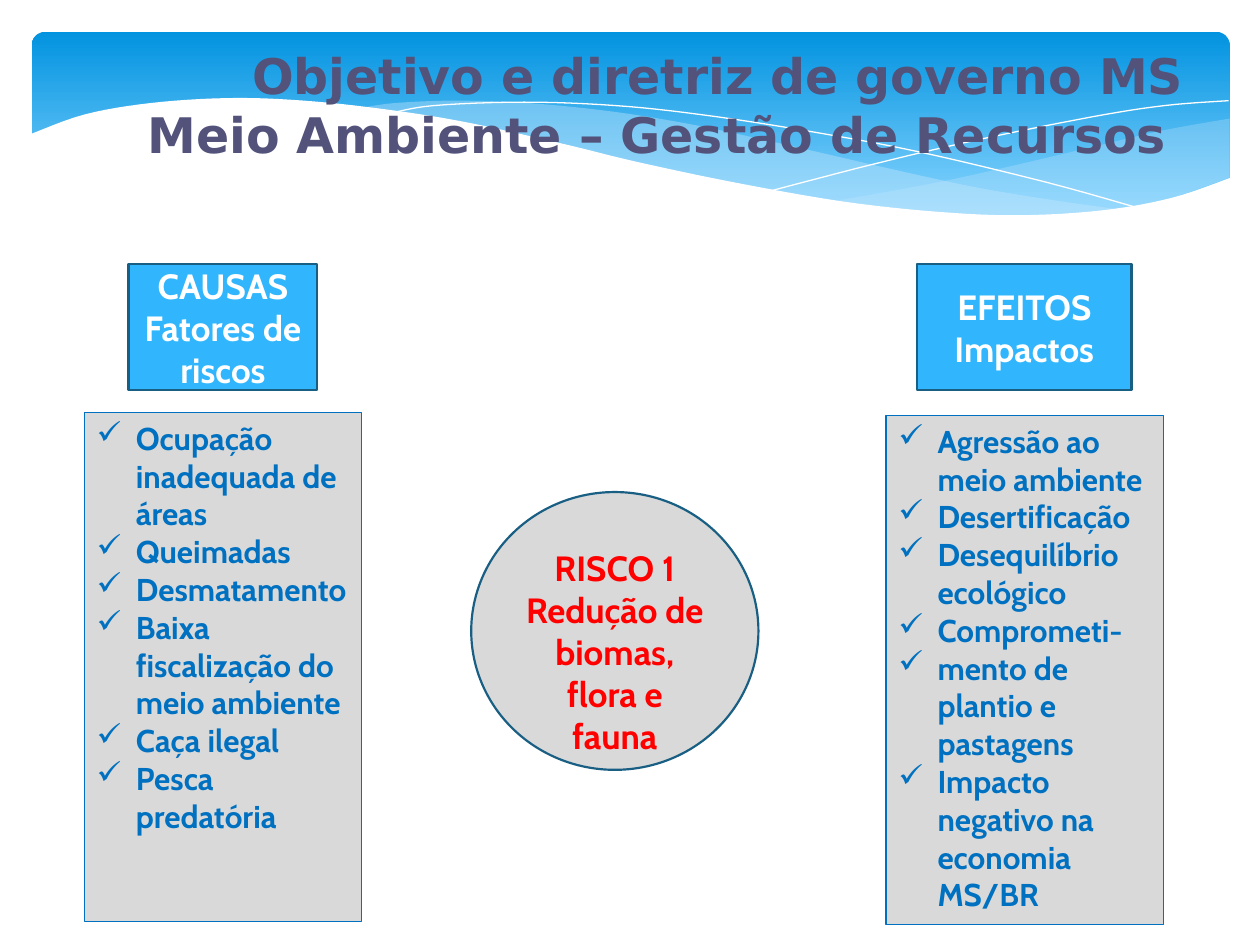
"""Build the slide on causes and effects of the biome-loss risk in MS."""
from lxml.etree import SubElement
from pptx import Presentation
from pptx.dml.color import RGBColor
from pptx.enum.shapes import MSO_SHAPE as Shape
from pptx.enum.text import MSO_ANCHOR as Anchor, PP_ALIGN as Align
from pptx.oxml.ns import qn
from pptx.util import Cm, Pt

COLORS = {
    "sky_top": "0293E0", "sky_bottom": "83D3FE", "mist": "C6E7FC",
    "white": "FFFFFF", "title": "52527A", "header": "31B6FD",
    "outline": "195F84", "panel": "D9D9D9", "blue": "0070C0", "red": "FF0000",
}

CREST_TOP = [(24.79, 2.39), (23.39, 2.64), (21.87, 3), (19.13, 3.63), (16.79, 4.06)]
CREST_BOTTOM = [(16.79, 4.06), (18.26, 4.24), (19.84, 4.36), (20.93, 4.37),
                (22.15, 4.29), (23.39, 4.06), (24.79, 3.58)]
SWELL_TOP = [(22.68, 4.24), (21.26, 4.04), (19.69, 3.78), (17.93, 3.4), (15.98, 2.95),
             (14.1, 2.54), (12.42, 2.26), (10.67, 2.08), (9.17, 2.03), (7.95, 2.08),
             (7.26, 2.18)]
SWELL_BOTTOM = [(7.26, 2.18), (8.69, 2.39), (10.26, 2.69), (12.47, 3.2), (14.83, 3.71),
                (16.89, 4.09), (18.69, 4.29), (20.22, 4.39), (21.54, 4.37), (22.68, 4.24)]
FALLING_LINE = [(7.85, 2.29), (8.74, 2.13), (10.57, 2.06), (12.42, 2.13), (14.12, 2.31),
                (16.15, 2.62), (18.47, 3.05), (21.11, 3.68), (23.04, 4.22)]
RISING_LINE = [(15.57, 3.84), (17.65, 3.3), (19.71, 2.82), (22, 2.36), (23.47, 2.13),
               (24.77, 2.03)]
SHORE = [(24.82, 3.58), (23.62, 3.99), (22.23, 4.24), (20.55, 4.34), (18.9, 4.27),
         (16.97, 4.06), (14.71, 3.66), (12.78, 3.25), (11.35, 2.9), (9.27, 2.44),
         (7.42, 2.16), (5.84, 2.01), (4.5, 1.98), (3.02, 2.08), (1.7, 2.31), (0.58, 2.72)]
SHORE_BASE = [(0.58, 5.69), (24.82, 5.69)]

CAUSES = ["Ocupação inadequada de áreas", "Queimadas", "Desmatamento",
          "Baixa fiscalização do meio ambiente", "Caça ilegal", "Pesca predatória"]
EFFECTS = ["Agressão ao meio ambiente", "Desertificação", "Desequilíbrio ecológico",
           "Comprometi-", "mento de plantio e pastagens",
           "Impacto negativo na economia MS/BR"]


def rgb(name):
    """Return the named colour."""
    return RGBColor.from_string(COLORS[name])


def smooth(knots, steps=6):
    """Return points of a Catmull-Rom curve through the knots."""
    padded = [knots[0], *knots, knots[-1]]
    curve = [knots[0]]
    for a, b, c, d in zip(padded, padded[1:], padded[2:], padded[3:]):
        for step in range(1, steps + 1):
            t = step / steps
            curve.append(tuple(
                (2 * q + (r - p) * t + (2 * p - 5 * q + 4 * r - s) * t ** 2
                 + (3 * q - p - 3 * r + s) * t ** 3) / 2
                for p, q, r, s in zip(a, b, c, d)))
    return curve


def add_wave(slide, outline, fill=None, opacity=100, close=True):
    """Draw a filled wave, or a white hairline when no fill is given."""
    points = [(Cm(x), Cm(y)) for x, y in outline]
    builder = slide.shapes.build_freeform(*points[0])
    builder.add_line_segments(points[1:], close=close)
    wave = builder.convert_to_shape()
    wave.shadow.inherit = False
    if fill is None:
        wave.fill.background()
        wave.line.color.rgb = rgb("white")
        wave.line.width = Pt(0)
        return
    wave.fill.solid()
    wave.fill.fore_color.rgb = rgb(fill)
    wave.line.fill.background()
    if opacity < 100:
        tint = next(wave.fill._xPr.iter(qn("a:srgbClr")))
        SubElement(tint, qn("a:alpha"), val=str(opacity * 1000))


def add_sky(slide):
    """Draw the rounded gradient band with its waves."""
    sky = slide.shapes.add_shape(
        Shape.ROUNDED_RECTANGLE, Cm(0.64), Cm(0.64), Cm(24.15), Cm(3.96))
    sky.adjustments[0] = 0.07
    sky.shadow.inherit = False
    sky.line.fill.background()
    sky.fill.gradient()
    sky.fill.gradient_angle = 270
    shades = (("sky_top", 0), ("sky_bottom", 0.9))
    for stop, (shade, position) in zip(sky.fill.gradient_stops, shades):
        stop.color.rgb = rgb(shade)
        stop.position = position
    add_wave(slide, smooth(CREST_TOP) + smooth(CREST_BOTTOM), "mist", 29)
    add_wave(slide, smooth(SWELL_TOP) + smooth(SWELL_BOTTOM), "mist", 40)
    for hairline in (FALLING_LINE, RISING_LINE):
        add_wave(slide, smooth(hairline), close=False)
    add_wave(slide, smooth(SHORE) + SHORE_BASE, "white")


def write(frame, lines, size, color, align, font="Cabin", bullet=None):
    """Write one bold paragraph per line, with an optional bullet."""
    frame.word_wrap = True
    for index, line in enumerate(lines):
        paragraph = frame.add_paragraph() if index else frame.paragraphs[0]
        paragraph.alignment = align
        run = paragraph.add_run()
        run.text = line
        run.font.name = font
        run.font.size = Pt(size)
        run.font.bold = True
        run.font.color.rgb = rgb(color)
        if bullet:
            props = paragraph._p.get_or_add_pPr()
            props.set("marL", str(Cm(0.79)))
            props.set("indent", str(-Cm(0.79)))
            SubElement(props, qn("a:buChar"), char=bullet)


def add_block(slide, kind, box, fill, line, weight):
    """Draw a filled, outlined shape and return its text frame."""
    block = slide.shapes.add_shape(kind, *map(Cm, box))
    block.shadow.inherit = False
    block.fill.solid()
    block.fill.fore_color.rgb = rgb(fill)
    block.line.color.rgb = rgb(line)
    block.line.width = Pt(weight)
    block.text_frame.vertical_anchor = Anchor.MIDDLE
    return block.text_frame


def add_title(slide):
    """Write the right-aligned two-line title."""
    frame = slide.shapes.add_textbox(
        Cm(2.69), Cm(-0.48), Cm(21.41), Cm(3.84)).text_frame
    frame.margin_top = Cm(1.4)
    write(frame, ["Objetivo e diretriz de governo MS", "Meio Ambiente – Gestão de Recursos "],
          28, "title", Align.RIGHT, "DejaVu Sans")


def add_header(slide, left, width, lines):
    """Draw the heading of one side."""
    frame = add_block(slide, Shape.RECTANGLE, (left, 5.33, width, 2.54),
                      "header", "outline", 1.25)
    write(frame, lines, 20, "white", Align.CENTER)


def add_checklist(slide, left, top, items):
    """Draw a grey panel with ticked items."""
    frame = add_block(slide, Shape.RECTANGLE, (left, top, 5.59, 10.26), "panel", "blue", 0.75)
    frame.vertical_anchor = Anchor.TOP
    write(frame, items, 18, "blue", Align.LEFT, bullet="✓")


def add_risk(slide):
    """Draw the central risk circle."""
    frame = add_block(slide, Shape.OVAL, (9.5, 9.92, 5.79, 5.6), "panel", "outline", 1.25)
    frame.margin_top = Cm(0.97)
    write(frame, ["RISCO 1", "Redução de biomas, flora e fauna"], 20, "red", Align.CENTER)


def main():
    """Build and save the slide."""
    deck = Presentation()
    deck.slide_width, deck.slide_height = Cm(25.4), Cm(19.05)
    slide = deck.slides.add_slide(deck.slide_layouts[6])
    add_sky(slide)
    add_title(slide)
    add_header(slide, 2.59, 3.81, ["CAUSAS", "Fatores de", "riscos"])
    add_header(slide, 18.49, 4.32, ["EFEITOS", "Impactos"])
    add_checklist(slide, 1.7, 8.32, CAUSES)
    add_checklist(slide, 17.86, 8.38, EFFECTS)
    add_risk(slide)
    deck.save("out.pptx")


if __name__ == "__main__":
    main()
